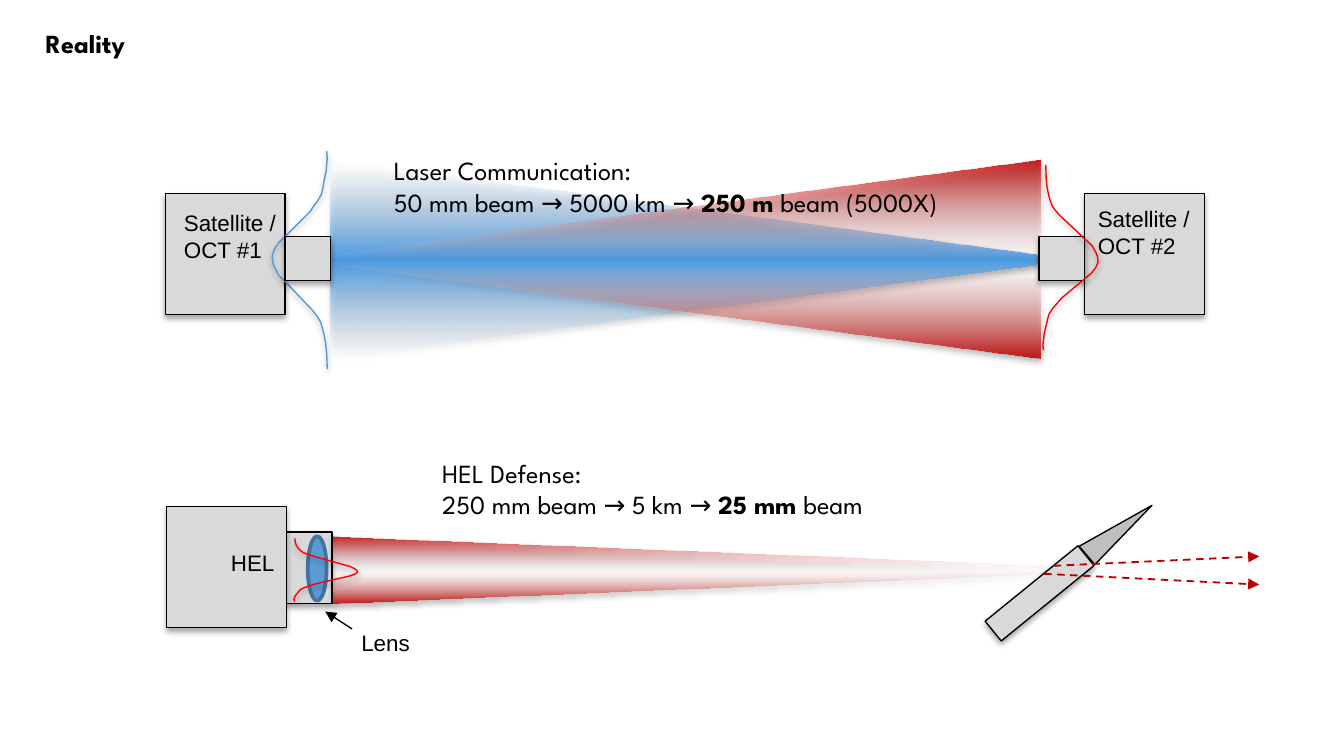
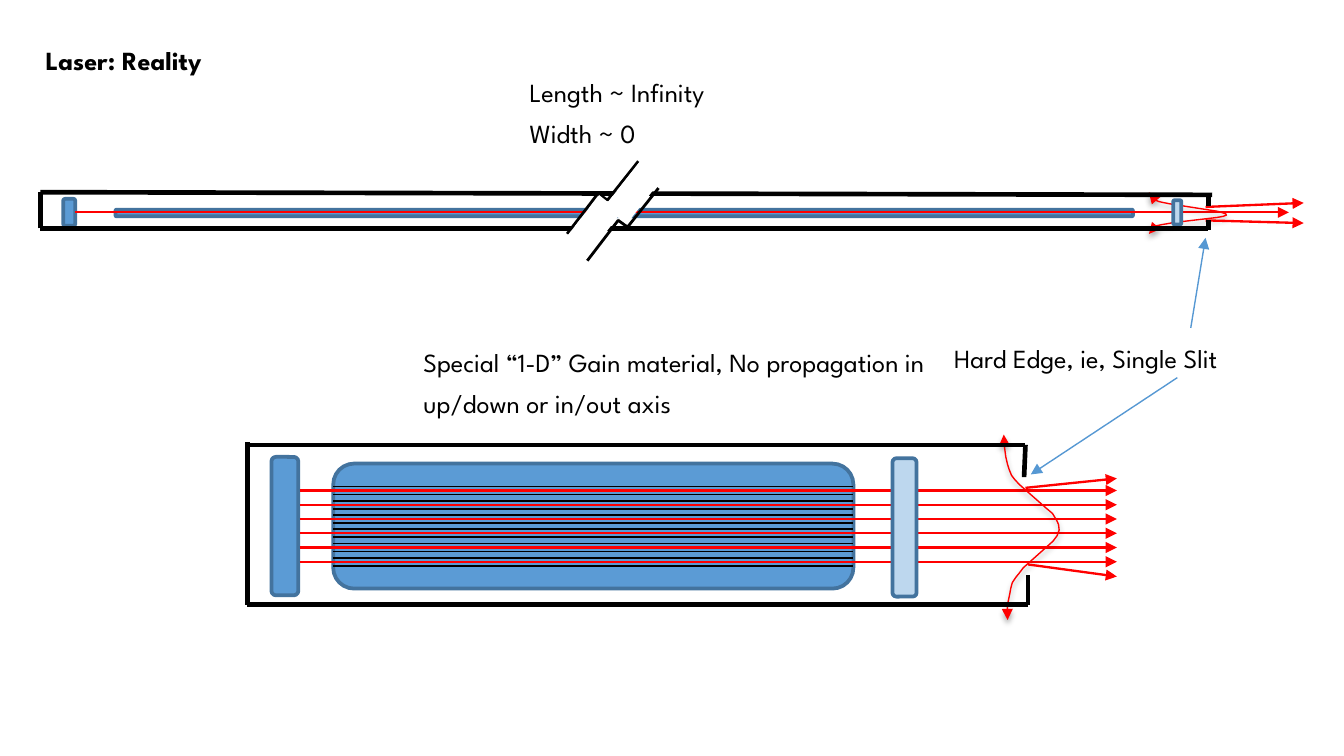
from dataclasses import dataclass

from lxml.etree import SubElement
from pptx import Presentation
from pptx.dml.color import RGBColor
from pptx.enum.dml import MSO_LINE
from pptx.enum.shapes import MSO_CONNECTOR, MSO_SHAPE
from pptx.enum.text import MSO_AUTO_SIZE
from pptx.oxml.ns import qn
from pptx.util import Inches, Pt


@dataclass(frozen=True)
class Theme:
    """Colours, fonts and sizes shared by both slides."""
    black: str = "000000"
    white: str = "FFFFFF"
    body: str = "D9D9D9"
    nose: str = "BFBFBF"
    glass: str = "5B9BD5"
    pale_glass: str = "BDD7EE"
    glass_edge: str = "43739E"
    pointer: str = "5698D3"
    ray: str = "FF0000"
    dark_ray: str = "C00000"
    blue_beam: tuple = (("499CE7", 100), ("DEEBF7", 0))
    red_beam: tuple = (("C00000", 90), ("FFDADA", 0))
    heading_font: str = "League Spartan"
    label_font: str = "Arial"
    heading_size: float = 14
    label_size: float = 12
    thin: float = 0.75
    slot: float = 1
    ray_width: float = 1.25
    break_width: float = 1.5
    edge: float = 2
    wall: float = 2.5


THEME = Theme()
BELL = ((0, 0), (0.07, 0.01), (0.12, 0.03), (0.16, 0.06), (0.19, 0.09), (0.22, 0.13),
        (0.24, 0.18), (0.27, 0.27), (0.4, 0.76), (0.43, 0.88), (0.47, 0.96), (0.49, 0.99),
        (0.52, 1), (0.55, 0.96), (0.58, 0.88), (0.72, 0.32), (0.75, 0.24), (0.77, 0.18),
        (0.8, 0.11), (0.83, 0.08), (0.86, 0.06), (0.91, 0.02), (0.97, 0), (1, 0.01))

SHORT_CAVITY = {
    "gain": (0.64, 0.14, 3.87, 0.93),
    "mirror": (0.18, 0.09, 0.2, 1.03),
    "coupler": (4.8, 0.1, 0.18, 1.03),
    "beams": [(0.39, 0.34 + 0.106 * row, 6.47, 0.34 + 0.106 * row) for row in range(6)],
    "slots": [(0.64, 0.34 + 0.106 * row + shift, 4.51, 0.34 + 0.106 * row + shift)
              for row in range(6) for shift in (-0.03, 0.03)],
    "bell": ((5.15, 0.41, 1.38, 0.4), 89),
    "walls": [(0, 0, 5.79, 0), (0, 1.19, 5.81, 1.19), (0, 1.19, 0, -0.02),
              (5.81, 1.19, 5.81, 0.97), (5.78, 0.24, 5.79, 0)],
    "rays": [(5.79, 0.32, 6.47, 0.25), (5.81, 0.89, 6.47, 0.98)],
}
LONG_CAVITY = {
    "gain": (0.56, 0.13, 7.57, 0.05),
    "mirror": (0.17, 0.05, 0.09, 0.2),
    "coupler": (8.43, 0.06, 0.06, 0.18),
    "beams": [(0.26, 0.15, 9.29, 0.15)],
    "slots": [],
    "bell": ((8.38, -0.13, 0.31, 0.58), 90.9),
    "walls": [(0, 0, 8.72, 0.02), (0, 0.27, 8.69, 0.27), (0, 0.27, 0, 0),
              (8.69, 0.28, 8.69, 0.21), (8.69, 0.1, 8.69, 0.01)],
    "rays": [(8.67, 0.11, 9.4, 0.08), (8.67, 0.21, 9.4, 0.23)],
}


def assign(target, values):
    """Set each attribute named in a dict of format values."""
    for name, value in values.items():
        setattr(target, name, value)


def within(box, part):
    """Move a part, given relative to a box, to its place on the slide."""
    left, top, width, height = part
    return box[0] + left, box[1] + top, width, height


def segment(box, ends):
    """Move the two ends of a line, given relative to a box, to the slide."""
    return [value + box[index % 2] for index, value in enumerate(ends)]


def style_line(shape, colour, width, heads=(), dash=None):
    """Set colour, width, dash and arrowheads of an outline."""
    shape.line.color.rgb = RGBColor.from_string(colour)
    assign(shape.line, {"width": Pt(width), "dash_style": dash})
    line = shape._element.spPr.find(qn("a:ln"))
    for head in heads:
        SubElement(line, qn(f"a:{head}"), type="triangle")


def cast_shadow(shape, visible=True):
    """Replace the inherited shadow by a soft drop shadow or by none."""
    shape.shadow.inherit = False
    if visible:
        effects = shape._element.spPr.find(qn("a:effectLst"))
        shadow = SubElement(effects, qn("a:outerShdw"), blurRad="40000", dist="23000",
                            dir="5400000", rotWithShape="0")
        colour = SubElement(shadow, qn("a:srgbClr"), val=THEME.black)
        SubElement(colour, qn("a:alpha"), val="35000")


def add_block(slide, box, fill, kind=MSO_SHAPE.RECTANGLE, line=None, rotation=0, shadow=False):
    """Add a filled preset shape."""
    shape = slide.shapes.add_shape(kind, *map(Inches, box))
    shape.rotation = rotation
    shape.fill.solid()
    shape.fill.fore_color.rgb = RGBColor.from_string(fill)
    if line:
        style_line(shape, *line)
    else:
        shape.line.fill.background()
    cast_shadow(shape, shadow)
    return shape


def add_body(slide, box, rotation=0):
    """Add a grey hardware block with outline and shadow."""
    return add_block(slide, box, THEME.body, line=(THEME.black, THEME.thin),
                     rotation=rotation, shadow=True)


def add_optic(slide, box, fill=THEME.glass, kind=MSO_SHAPE.ROUNDED_RECTANGLE):
    """Add a mirror, lens or gain medium."""
    return add_block(slide, box, fill, kind, (THEME.glass_edge, THEME.edge))


def add_line(slide, ends, colour, width, arrow=False, dash=None):
    """Add a straight connector, with an arrowhead at its end if asked."""
    connector = slide.shapes.add_connector(MSO_CONNECTOR.STRAIGHT, *map(Inches, ends))
    style_line(connector, colour, width, ("tailEnd",) if arrow else (), dash)
    SubElement(connector._element.spPr, qn("a:effectLst"))
    return connector


def add_outline(slide, points, closed=False):
    """Add a freeform through points given in inches."""
    corners = [(Inches(x), Inches(y)) for x, y in points]
    builder = slide.shapes.build_freeform(*corners[0])
    builder.add_line_segments(corners[1:], close=closed)
    return builder.convert_to_shape()


def add_bell(slide, box, rotation, colour, heads=()):
    """Add a bell-shaped intensity profile, turned about its centre."""
    left, top, width, height = box
    bell = add_outline(slide, [(left + u * width, top + (1 - v) * height) for u, v in BELL])
    bell.fill.background()
    bell.rotation = rotation
    style_line(bell, colour, THEME.thin, heads)
    cast_shadow(bell)


def add_beam(slide, base, tip, axis, half, stops, dense_axis):
    """Add a tapering beam as two gradient triangles about its axis."""
    for side in (-1, 1):
        wedge = add_outline(slide, [(base, axis), (base, axis + side * half), (tip, axis)], True)
        wedge.fill.gradient()
        wedge.fill.gradient_angle = 90 if (side < 0) == dense_axis else 270
        for stop, (colour, _) in zip(wedge.fill.gradient_stops, stops):
            stop.color.rgb = RGBColor.from_string(colour)
        for element, (_, alpha) in zip(wedge._element.spPr.iter(qn("a:srgbClr")), stops):
            SubElement(element, qn("a:alpha"), val=str(alpha * 1000))
        wedge.line.fill.background()
        cast_shadow(wedge)


def add_text(slide, box, paragraphs, font, size, insets, spacing=None, fit=MSO_AUTO_SIZE.NONE):
    """Add wrapped text; each paragraph is a list of (text, bold) runs."""
    frame = slide.shapes.add_textbox(*map(Inches, box)).text_frame
    across, down = map(Inches, insets)
    assign(frame, {"word_wrap": True, "auto_size": fit, "margin_left": across,
                   "margin_right": across, "margin_top": down, "margin_bottom": down})
    for index, runs in enumerate(paragraphs):
        paragraph = frame.add_paragraph() if index else frame.paragraphs[0]
        paragraph.line_spacing = spacing
        for text, bold in runs:
            run = paragraph.add_run()
            run.text = text
            assign(run.font, {"name": font, "size": Pt(size), "bold": bold})
            run.font.color.rgb = RGBColor.from_string(THEME.black)


def add_heading(slide, box, paragraphs, spacing=None):
    """Add text in the heading font."""
    add_text(slide, box, paragraphs, THEME.heading_font, THEME.heading_size, (0.07, 0.04), spacing)


def add_label(slide, box, text):
    """Add a small hardware label."""
    add_text(slide, box, [[(text, False)]], THEME.label_font, THEME.label_size, (0.1, 0.05),
             fit=MSO_AUTO_SIZE.SHAPE_TO_FIT_TEXT)


def draw_link(slide, box):
    """Draw two satellites and the crossing beams between them."""
    for left, text_left, text_top, text in ((0, 0.04, 0.32, "Satellite / OCT #1"),
                                            (6.84, 6.84, 0.29, "Satellite / OCT #2")):
        add_body(slide, within(box, (left, 0.25, 0.89, 0.9)))
        add_label(slide, within(box, (text_left, text_top, 1.04, 0.5)), text)
    left, axis = box[0], box[1] + box[3] / 2
    add_beam(slide, left + 1.23, left + 6.83, axis, box[3] / 2, THEME.blue_beam, True)
    add_bell(slide, within(box, (0.19, 0.54, 1.62, 0.41)), 270, THEME.pointer)
    add_beam(slide, left + 6.51, left + 0.9, axis, box[3] / 2, THEME.red_beam, False)
    for aperture in (0.89, 6.5):
        add_body(slide, within(box, (aperture, 0.57, 0.34, 0.33)))
    add_heading(slide, within(box, (1.63, -0.08, 4.78, 0.68)), [
        [("Laser Communication:", False)],
        [("50 mm beam → 5000 km → ", False), ("250 m", True), (" beam (5000X)", False)]])
    add_bell(slide, within(box, (6.05, 0.53, 1.38, 0.4)), 90.9, THEME.ray)


def draw_defense(slide, box):
    """Draw the laser, its focused beam and the target."""
    add_body(slide, within(box, (0.89, 0.33, 0.34, 0.53)))
    add_body(slide, within(box, (0, 0.14, 0.89, 0.9)))
    add_label(slide, within(box, (0.38, 0.41, 1.04, 0.3)), "HEL")
    add_beam(slide, box[0] + 1.24, box[0] + 7.5, box[1] + 0.61, 0.25, THEME.red_beam, False)
    add_block(slide, within(box, (6.63, 0.32, 0.89, 0.94)), THEME.white, rotation=49.9)
    add_body(slide, within(box, (6.05, 0.69, 0.89, 0.19)), 320.9)
    nose = add_block(slide, within(box, (6.99, 0, 0.18, 0.61)), THEME.nose,
                     MSO_SHAPE.ISOSCELES_TRIANGLE, (THEME.black, THEME.thin), 49.5)
    nose.adjustments[0] = 0.67
    for ends in ((6.6, 0.58, 8.13, 0.51), (6.53, 0.64, 8.13, 0.72)):
        add_line(slide, segment(box, ends), THEME.dark_ray, THEME.slot, True, MSO_LINE.DASH)
    add_heading(slide, within(box, (1.98, -0.27, 4.65, 0.68)), [
        [("HEL Defense:", False)],
        [("250 mm beam → 5 km → ", False), ("25 mm ", True), ("beam", False)]])
    add_optic(slide, within(box, (1.05, 0.36, 0.14, 0.48)), kind=MSO_SHAPE.OVAL)
    add_label(slide, within(box, (1.35, 1, 1.04, 0.3)), "Lens")
    add_line(slide, segment(box, (1.38, 1.05, 1.18, 0.92)), THEME.black, THEME.thin, True)
    add_bell(slide, within(box, (0.95, 0.38, 0.47, 0.47)), 90.9, THEME.ray)


def draw_cavity(slide, box, parts):
    """Draw a laser cavity; return its back mirror and its beams."""
    add_optic(slide, within(box, parts["gain"]))
    mirror = add_optic(slide, within(box, parts["mirror"]))
    for ends in parts["slots"]:
        add_line(slide, segment(box, ends), THEME.black, THEME.slot)
    beams = [add_line(slide, segment(box, ends), THEME.ray, THEME.ray_width, True)
             for ends in parts["beams"]]
    bell, rotation = parts["bell"]
    add_bell(slide, within(box, bell), rotation, THEME.ray, ("headEnd", "tailEnd"))
    add_optic(slide, within(box, parts["coupler"]), THEME.pale_glass)
    for ends in parts["rays"]:
        add_line(slide, segment(box, ends), THEME.ray, THEME.ray_width, True)
    for ends in parts["walls"]:
        add_line(slide, segment(box, ends), THEME.black, THEME.wall)
    return mirror, beams


def draw_break(slide, box):
    """Draw the zigzag break that shortens the long cavity."""
    zigzag = ((0.53, 0), (0.3, 0.29), (0.23, 0.24), (0, 0.54))
    for left, top in ((0, 0), (0.15, 0.2)):
        stroke = add_outline(slide, [(box[0] + left + x, box[1] + top + y) for x, y in zigzag])
        stroke.fill.background()
        style_line(stroke, THEME.black, THEME.break_width)
        cast_shadow(stroke, False)
    for left, top in ((0.39, 0.01), (0.08, 0.27)):
        add_block(slide, within(box, (left, top, 0.21, 0.44)), THEME.white, rotation=38)


def build_beam_slide(slide):
    """Compare a communication link with a focused beam."""
    add_heading(slide, (0.27, 0.16, 2.53, 0.68), [[("Reality", True)]])
    draw_link(slide, (1.23, 1.19, 7.73, 1.48))
    draw_defense(slide, (1.24, 3.63, 8.13, 1.3))


def build_cavity_slide(slide):
    """Compare a short and a very long laser cavity."""
    add_heading(slide, (0.27, 0.22, 3.03, 0.55), [[("Laser: Reality", True)]], 1.3)
    draw_cavity(slide, (1.84, 3.31, 6.47, 1.19), SHORT_CAVITY)
    mirror, beams = draw_cavity(slide, (0.3, 1.43, 9.4, 0.27), LONG_CAVITY)
    beams[0].begin_connect(mirror, 3)
    add_heading(slide, (3.87, 0.46, 3.03, 0.55),
                [[("Length ~ Infinity", False)], [("Width ~ 0", False)]], 1.3)
    draw_break(slide, (4.22, 1.2, 0.68, 0.74))
    add_heading(slide, (7.03, 2.44, 3.03, 0.55), [[("Hard Edge, ie, Single Slit", False)]], 1.3)
    for ends in ((8.86, 2.44, 8.97, 1.77), (8.76, 2.81, 7.67, 3.53)):
        add_line(slide, ends, THEME.pointer, THEME.thin, True)
    add_heading(slide, (3.08, 2.47, 4.17, 0.55), [[(
        "Special “1-D” Gain material, No propagation in up/down or in/out axis", False)]], 1.3)


def main():
    """Build the two slides in a 16:9 presentation and save them."""
    presentation = Presentation()
    width = Inches(10)
    assign(presentation, {"slide_width": width, "slide_height": width * 9 // 16})
    for build in (build_beam_slide, build_cavity_slide):
        build(presentation.slides.add_slide(presentation.slide_layouts[6]))
    presentation.save("out.pptx")


if __name__ == "__main__":
    main()
